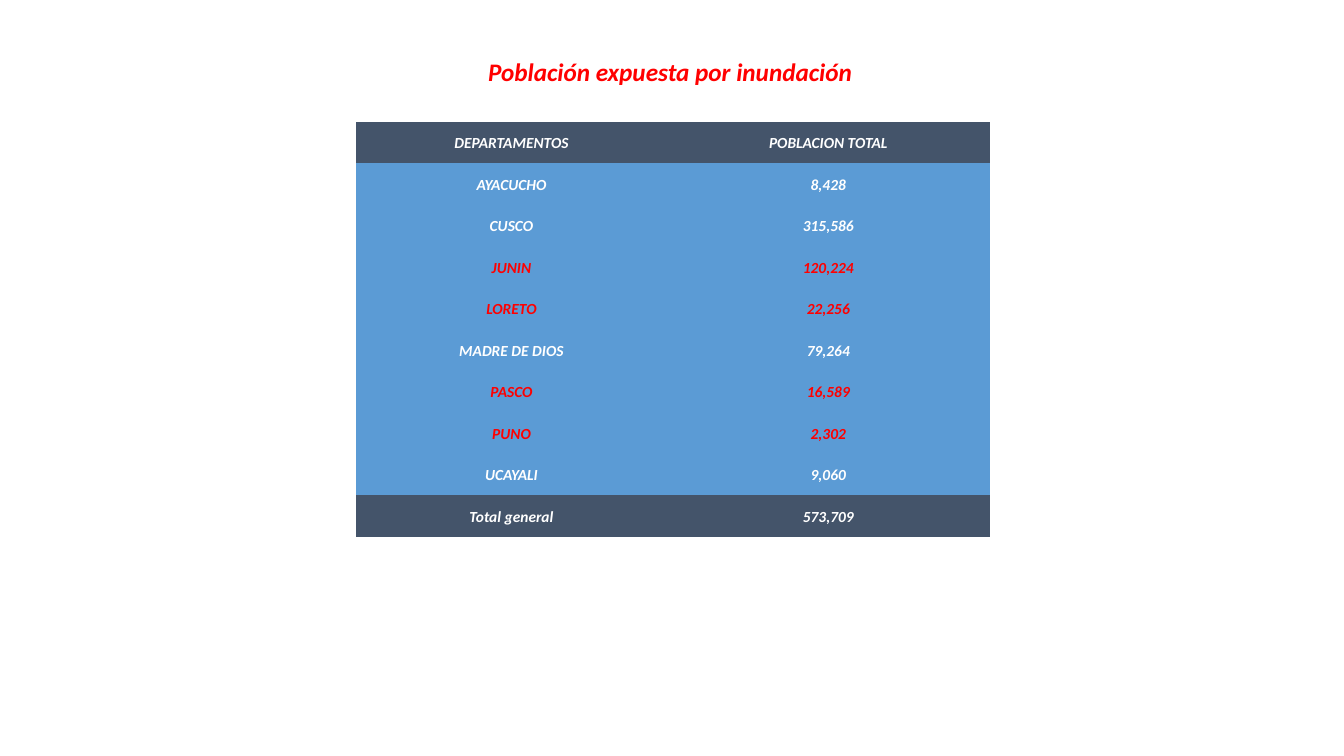
from dataclasses import dataclass

from pptx import Presentation
from pptx.dml.color import RGBColor as Rgb
from pptx.enum.text import MSO_ANCHOR as Anchor
from pptx.enum.text import MSO_AUTO_SIZE as Fit
from pptx.enum.text import PP_ALIGN as Align
from pptx.oxml.ns import qn
from pptx.slide import Slide
from pptx.table import _Cell as Cell
from pptx.text.text import _Paragraph as Para
from pptx.util import Cm, Pt

HUES = {"dark": "44546A", "blue": "5B9BD5", "white": "FFFFFF", "red": "FF0000"}
FACE = {"name": "Calibri", "bold": True, "italic": True}
PLAIN = "{2D5ABB26-0587-4C30-8999-92F81FD0307C}"
INSET = {
    "margin_left": Cm(0.03),
    "margin_right": Cm(0.03),
    "margin_top": Cm(0.03),
    "margin_bottom": Cm(0),
    "vertical_anchor": Anchor.MIDDLE,
}
WIDTHS = (7.84, 8.13)


@dataclass(frozen=True)
class Row:
    place: str
    count: str
    ink: str = "white"
    fill: str = "blue"


ROWS = (
    Row("DEPARTAMENTOS", "POBLACION TOTAL", fill="dark"),
    Row("AYACUCHO", "8,428"),
    Row("CUSCO", "315,586"),
    Row("JUNIN", "120,224", "red"),
    Row("LORETO", "22,256", "red"),
    Row("MADRE DE DIOS", "79,264"),
    Row("PASCO", "16,589", "red"),
    Row("PUNO", "2,302", "red"),
    Row("UCAYALI", "9,060"),
    Row("Total general", "573,709", fill="dark"),
)


def apply(item: object, format: dict) -> None:
    for key, value in format.items():
        setattr(item, key, value)


def write(para: Para, text: str, size: float, ink: str) -> None:
    para.alignment = Align.CENTER
    run = para.add_run()
    run.text = text
    apply(run.font, FACE | {"size": Pt(size)})
    run.font.color.rgb = Rgb.from_string(HUES[ink])


def add_title(slide: Slide) -> None:
    title = slide.shapes.title
    apply(title, {"left": Cm(12), "top": Cm(1.3),
                  "width": Cm(9.78), "height": Cm(1.02)})
    frame = title.text_frame
    apply(frame, {"word_wrap": False, "auto_size": Fit.NONE,
                  "vertical_anchor": Anchor.MIDDLE})
    write(frame.paragraphs[0], "Población expuesta por inundación", 18, "red")


def fill_cell(cell: Cell, text: str, row: Row) -> None:
    apply(cell, INSET)
    cell.fill.solid()
    cell.fill.fore_color.rgb = Rgb.from_string(HUES[row.fill])
    write(cell.text_frame.paragraphs[0], text, 11, row.ink)


def add_grid(slide: Slide) -> None:
    table = slide.shapes.add_table(
        len(ROWS), len(WIDTHS), Cm(8.97), Cm(3.07), Cm(sum(WIDTHS)), Cm(10.46)
    ).table
    apply(table, {"first_row": False, "horz_banding": False})
    table._tbl.tblPr.find(qn("a:tableStyleId")).text = PLAIN
    for col, width in zip(table.columns, WIDTHS):
        col.width = Cm(width)
    for line, row in zip(table.rows, ROWS):
        for cell, text in zip(line.cells, (row.place, row.count)):
            fill_cell(cell, text, row)


def main() -> None:
    deck = Presentation()
    apply(deck, {"slide_width": Cm(33.87), "slide_height": Cm(19.05)})
    slide = deck.slides.add_slide(deck.slide_layouts[5])
    add_title(slide)
    add_grid(slide)
    deck.save("out.pptx")


if __name__ == "__main__":
    main()
